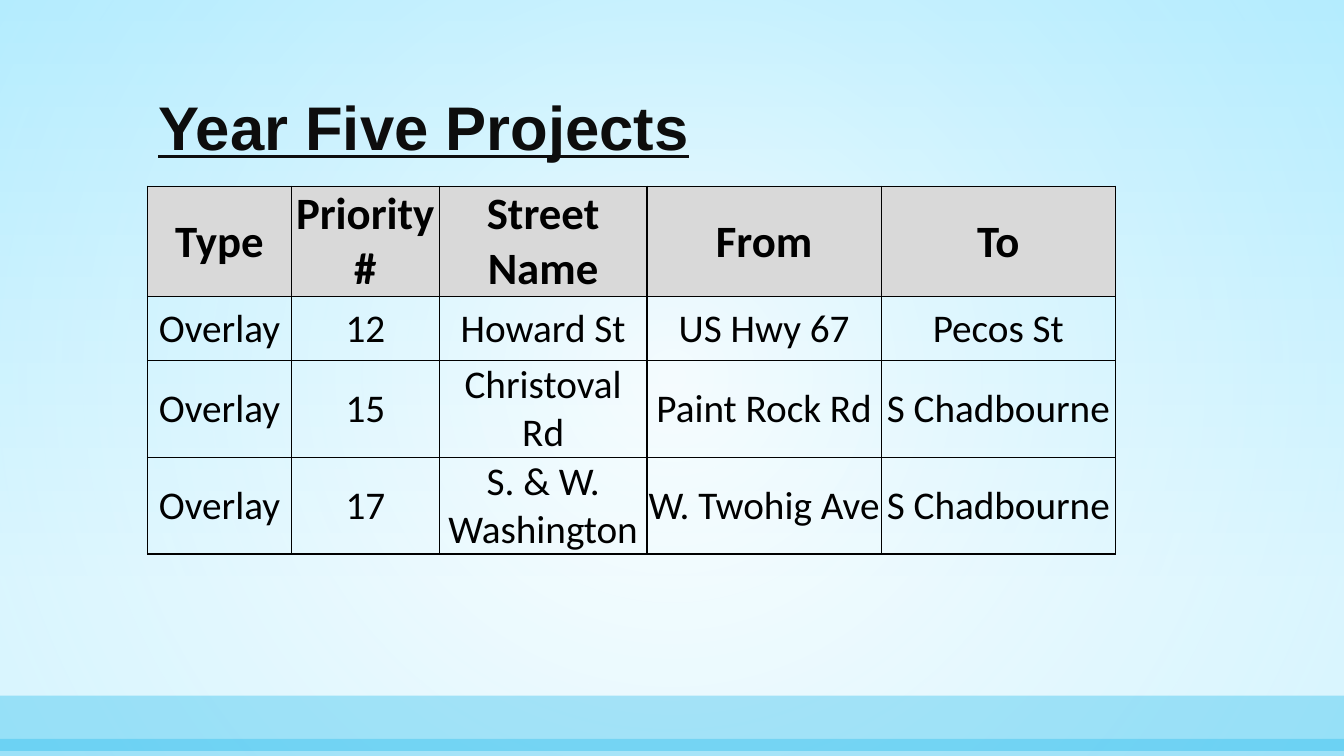
from dataclasses import dataclass

from lxml.etree import SubElement
from pptx import Presentation
from pptx.dml.color import RGBColor
from pptx.enum.shapes import MSO_SHAPE
from pptx.enum.text import MSO_ANCHOR, PP_ALIGN
from pptx.oxml import parse_xml
from pptx.oxml.ns import nsdecls, qn
from pptx.util import Pt

BLACK = RGBColor(0x00, 0x00, 0x00)
TITLE_INK = RGBColor(0x0D, 0x0D, 0x0D)
HEADER_GREY = RGBColor(0xD9, 0xD9, 0xD9)
WHITE = RGBColor(0xFF, 0xFF, 0xFF)
PALE_BLUE = RGBColor(0xC8, 0xF1, 0xFF)
SKY_BLUE = RGBColor(0x91, 0xE4, 0xFF)
BAND_BLUE = RGBColor(0x00, 0xB0, 0xEA)

SLIDE_WIDTH, SLIDE_HEIGHT = 960, 540
LINEAR_DOWN = '<a:lin ang="5400000" scaled="0"/>'
FROM_CENTRE = ('<a:path path="circle"><a:fillToRect l="50000" t="50000" '
               'r="50000" b="50000"/></a:path>')

TITLE_FONT = {"name": "Arial", "size": Pt(44), "bold": True, "underline": True}
HEADER_FONT = {"name": "Calibri", "size": Pt(32), "bold": True}
BODY_FONT = {"name": "Calibri", "size": Pt(28), "bold": False}
CELL_FORMAT = {"vertical_anchor": MSO_ANCHOR.MIDDLE, "margin_left": Pt(0.7),
               "margin_right": Pt(0.7), "margin_top": Pt(0.7), "margin_bottom": Pt(0)}

COLUMN_WIDTHS = (102.8, 105.6, 148.4, 167.3, 167.3)
ROW_HEIGHTS = (78.8, 45.4, 69.2, 69.2)
PROJECTS = (
    ("Type", "Priority #", "Street Name", "From", "To"),
    ("Overlay", "12", "Howard St", "US Hwy 67", "Pecos St"),
    ("Overlay", "15", "Christoval Rd", "Paint Rock Rd", "S Chadbourne"),
    ("Overlay", "17", "S. & W. Washington", "W. Twohig Ave", "S Chadbourne"),
)


@dataclass(frozen=True)
class Stop:
    position: int
    color: RGBColor
    opacity: int = 100


@dataclass(frozen=True)
class Band:
    top: float
    height: float
    opacity: int


BANDS = (Band(496.8, 39.6, 30), Band(527.8, 12.2, 28))


def apply_format(target, values: dict) -> None:
    for name, value in values.items():
        setattr(target, name, value)


def set_gradient(properties, stops: tuple[Stop, ...], direction: str) -> None:
    """Replace the solid fill held by the properties element with a gradient."""
    stop_xml = "".join(
        f'<a:gs pos="{stop.position * 1000}"><a:srgbClr val="{stop.color}">'
        f'<a:alpha val="{stop.opacity * 1000}"/></a:srgbClr></a:gs>'
        for stop in stops)
    gradient = parse_xml(f'<a:gradFill {nsdecls("a")} rotWithShape="1">'
                         f'<a:gsLst>{stop_xml}</a:gsLst>{direction}</a:gradFill>')
    properties.replace(properties.find(qn("a:solidFill")), gradient)


def add_full_width(slide, top: float, height: float, color: RGBColor):
    shape = slide.shapes.add_shape(
        MSO_SHAPE.RECTANGLE, Pt(0), Pt(top), Pt(SLIDE_WIDTH), Pt(height))
    shape.shadow.inherit = False
    shape.fill.solid()
    shape.fill.fore_color.rgb = color
    shape.line.fill.background()
    return shape


def add_band(slide, band: Band) -> None:
    shape = add_full_width(slide, band.top, band.height, BAND_BLUE)
    color = shape.element.spPr.find(qn("a:solidFill")).find(qn("a:srgbClr"))
    SubElement(color, qn("a:alpha"), val=str(band.opacity * 1000))


def set_borders(cell) -> None:
    properties = cell._tc.get_or_add_tcPr()
    for index, side in enumerate(("lnL", "lnR", "lnT", "lnB")):
        properties.insert(index, parse_xml(
            f'<a:{side} {nsdecls("a")} w="{Pt(1)}"><a:solidFill>'
            f'<a:srgbClr val="{BLACK}"/></a:solidFill></a:{side}>'))


def fill_cell(cell, text: str, is_header: bool) -> None:
    apply_format(cell, CELL_FORMAT)
    cell.text = text
    paragraph = cell.text_frame.paragraphs[0]
    paragraph.alignment = PP_ALIGN.CENTER
    apply_format(paragraph.runs[0].font, HEADER_FONT if is_header else BODY_FONT)
    paragraph.runs[0].font.color.rgb = BLACK
    if is_header:
        cell.fill.solid()
        cell.fill.fore_color.rgb = HEADER_GREY
    else:
        cell.fill.background()
    set_borders(cell)


def add_projects_table(slide) -> None:
    table = slide.shapes.add_table(
        len(PROJECTS), len(COLUMN_WIDTHS), Pt(105.4), Pt(133),
        Pt(sum(COLUMN_WIDTHS)), Pt(sum(ROW_HEIGHTS))).table
    apply_format(table, {"first_row": False, "horz_banding": False})
    for column, width in zip(table.columns, COLUMN_WIDTHS):
        column.width = Pt(width)
    for row, height in zip(table.rows, ROW_HEIGHTS):
        row.height = Pt(height)
    for row_index, project in enumerate(PROJECTS):
        for column_index, text in enumerate(project):
            fill_cell(table.cell(row_index, column_index), text, row_index == 0)


def add_title(slide) -> None:
    title = slide.shapes.title
    apply_format(title, {"left": Pt(105.8), "top": Pt(34.6),
                         "width": Pt(748.8), "height": Pt(85.7)})
    title.text_frame.text = "Year Five Projects"
    title.text_frame.vertical_anchor = MSO_ANCHOR.BOTTOM
    paragraph = title.text_frame.paragraphs[0]
    apply_format(paragraph, {"alignment": PP_ALIGN.LEFT, "line_spacing": 0.9})
    apply_format(paragraph.runs[0].font, TITLE_FONT)
    paragraph.runs[0].font.color.rgb = TITLE_INK
    # Bring the title in front of the backdrop
    title.element.getparent().append(title.element)


def add_backdrop(slide) -> None:
    slide.background.fill.solid()
    set_gradient(slide.element.find(".//" + qn("p:bgPr")),
                 (Stop(0, PALE_BLUE, 56), Stop(79, WHITE)), LINEAR_DOWN)
    glow = add_full_width(slide, 0, SLIDE_HEIGHT, WHITE)
    set_gradient(glow.element.spPr,
                 (Stop(0, WHITE, 49), Stop(100, SKY_BLUE, 35)), FROM_CENTRE)
    for band in BANDS:
        add_band(slide, band)


def main() -> None:
    presentation = Presentation()
    presentation.slide_width = Pt(SLIDE_WIDTH)
    presentation.slide_height = Pt(SLIDE_HEIGHT)
    slide = presentation.slides.add_slide(presentation.slide_layouts[5])
    add_backdrop(slide)
    add_title(slide)
    add_projects_table(slide)
    presentation.save("out.pptx")


if __name__ == "__main__":
    main()
